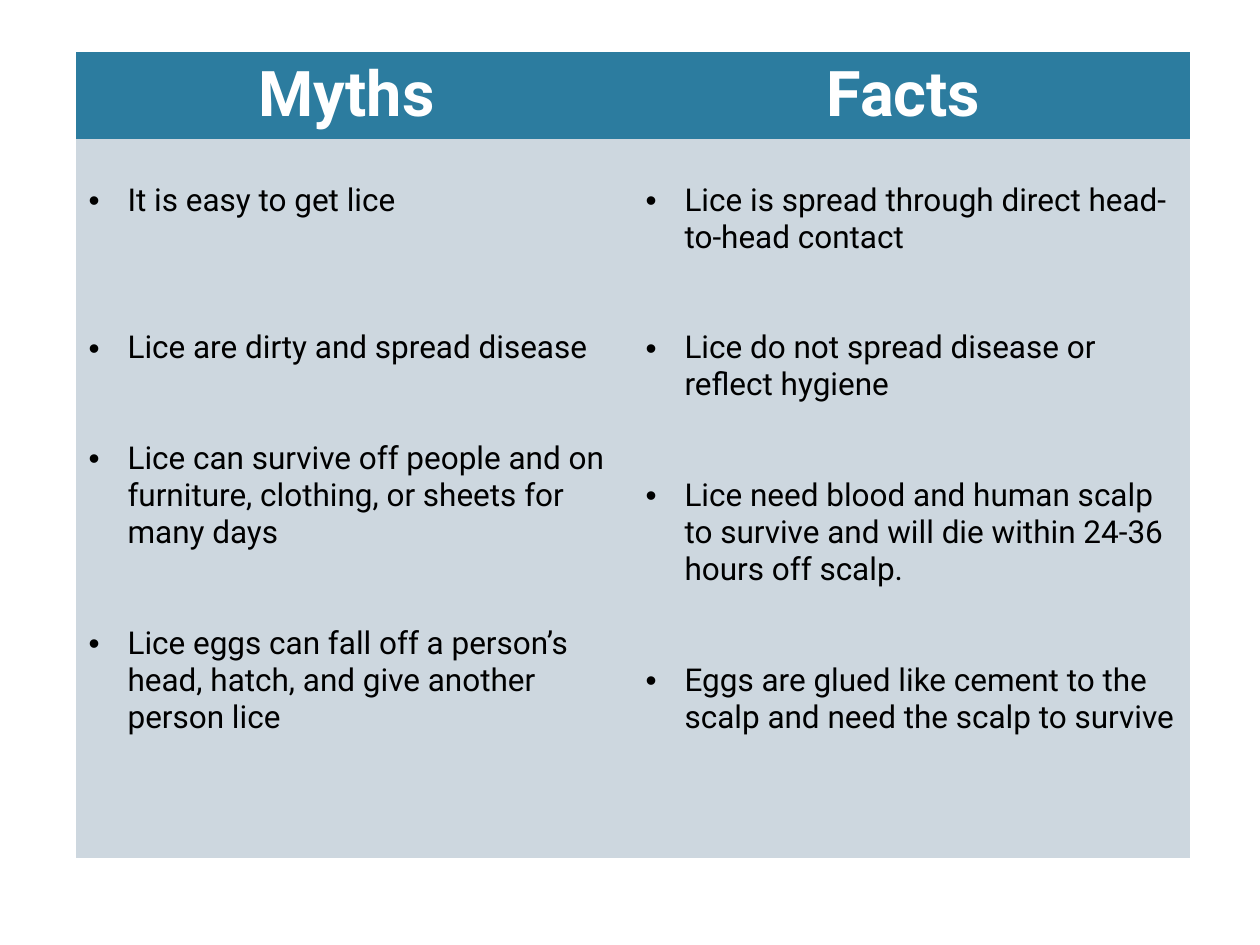
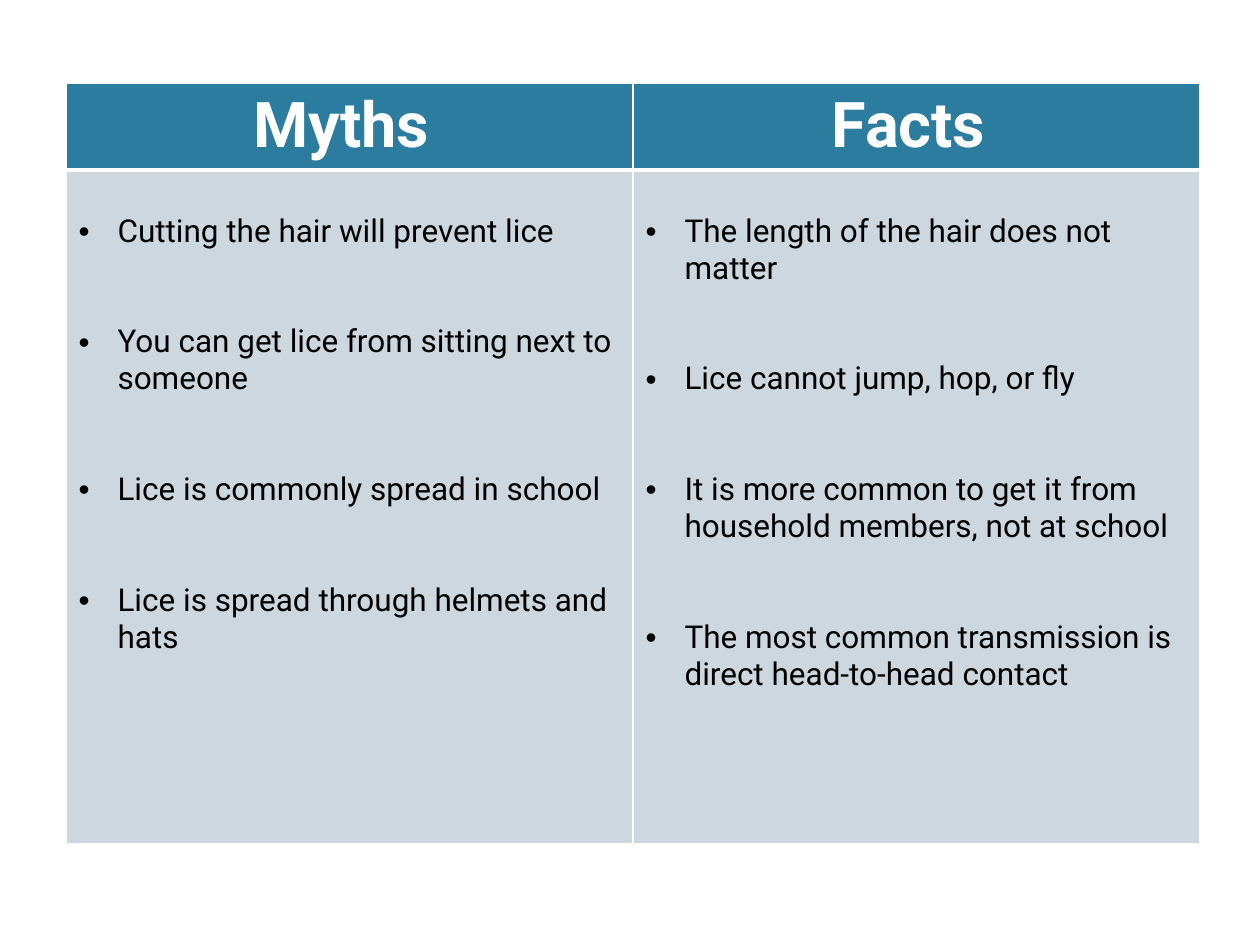
from dataclasses import dataclass

from lxml import etree
from pptx import Presentation, util as u
from pptx.dml.color import RGBColor
from pptx.enum import text
from pptx.oxml.ns import qn

HEADINGS = ("Myths ", "Facts ")

SLIDES = [
    {
        "left": 76, "top": 52, "column": 557, "body": 719, "ruled": False,
        "lists": [
            ["It is easy to get lice",
             "Lice are dirty and spread disease",
             "Lice can survive off people and on furniture, clothing, or sheets for many days",
             "Lice eggs can fall off a person’s head, hatch, and give another person lice"],
            ["Lice is spread through direct head-to-head contact",
             "Lice do not spread disease or reflect hygiene",
             "Lice need blood and human scalp to survive and will die within 24-36 hours off scalp.",
             "Eggs are glued like cement to the scalp and need the scalp to survive"],
        ],
        "blank_lines": [(0, 3, 2, 2), (0, 2, 2, 2)],
    },
    {
        "left": 66, "top": 83, "column": 567, "body": 674, "ruled": True,
        "lists": [
            ["Cutting the hair will prevent lice",
             "You can get lice from sitting next to someone",
             "Lice is commonly spread in school",
             "Lice is spread through helmets and hats"],
            ["The length of the hair does not matter",
             "Lice cannot jump, hop, or fly",
             "It is more common to get it from household members, not at school",
             "The most common transmission is direct head-to-head contact"],
        ],
        "blank_lines": [(0, 2, 2, 2), (0, 2, 2, 2)],
    },
]


@dataclass(frozen=True)
class Theme:
    font: str = "Roboto"
    header_fill: str = "2C7C9F"
    body_fill: str = "CDD7DF"
    rule: str = "FFFFFF"
    header_text: str = "FFFFFF"
    body_text: str = "000000"
    header_size: int = 36
    body_size: int = 18
    line_pitch: float = 21.1
    thin: int = 1
    thick: int = 3


THEME = Theme()
PX = 914400 / 126
HEADER_HEIGHT = 87
LIST_TOP = 43
LIST_INDENT = 39


def px(n):
    return u.Emu(round(n * PX))


def add_run(p, words, size, color, bold=False):
    r = p.add_run()
    r.text = words
    r.font.name = THEME.font
    r.font.size = u.Pt(size)
    r.font.bold = bold
    r.font.color.rgb = RGBColor.from_string(color)


def fill_cell(cell, color):
    cell.fill.solid()
    cell.fill.fore_color.rgb = RGBColor.from_string(color)


def set_borders(cell, widths):
    tc_pr = cell._tc.get_or_add_tcPr()
    for i, (side, width) in enumerate(zip("LRTB", widths)):
        ln = etree.Element(qn(f"a:ln{side}"), w=str(u.Pt(width)))
        if width:
            fill = etree.SubElement(ln, qn("a:solidFill"))
            etree.SubElement(fill, qn("a:srgbClr"), val=THEME.rule)
        else:
            etree.SubElement(ln, qn("a:noFill"))
        tc_pr.insert(i, ln)


def add_bullet(p):
    p_pr = p._p.get_or_add_pPr()
    p_pr.set("marL", str(px(LIST_INDENT)))
    p_pr.set("indent", str(-px(LIST_INDENT)))
    etree.SubElement(p_pr, qn("a:buFont"), typeface="Arial")
    etree.SubElement(p_pr, qn("a:buChar"), char="•")


def write_header(cell, heading):
    fill_cell(cell, THEME.header_fill)
    p = cell.text_frame.paragraphs[0]
    p.alignment = text.PP_ALIGN.CENTER
    add_run(p, heading, THEME.header_size, THEME.header_text, True)


def write_list(cell, items, blank_lines):
    fill_cell(cell, THEME.body_fill)
    cell.margin_top = px(LIST_TOP)
    tf = cell.text_frame
    for i, (item, blanks) in enumerate(zip(items, blank_lines)):
        p = tf.add_paragraph() if i else tf.paragraphs[0]
        p.space_before = u.Pt(blanks * THEME.line_pitch)
        add_bullet(p)
        add_run(p, item, THEME.body_size, THEME.body_text)


def add_comparison(s, c):
    heights = (HEADER_HEIGHT, c["body"])
    table = s.shapes.add_table(2, 2, px(c["left"]), px(c["top"]),
                               px(2 * c["column"]), px(sum(heights))).table
    table.horz_banding = False
    for row, height in zip(table.rows, heights):
        row.height = px(height)
    thin, thick = (THEME.thin, THEME.thick) if c["ruled"] else (0, 0)
    for i, heading in enumerate(HEADINGS):
        table.columns[i].width = px(c["column"])
        header, body = table.cell(0, i), table.cell(1, i)
        write_header(header, heading)
        write_list(body, c["lists"][i], c["blank_lines"][i])
        set_borders(header, (thin, thin, thin, thick))
        set_borders(body, (thin, thin, thick, thin))


def main():
    prs = Presentation()
    prs.slide_width, prs.slide_height = px(1260), px(945)
    for content in SLIDES:
        s = prs.slides.add_slide(prs.slide_layouts[6])
        add_comparison(s, content)
    prs.save("out.pptx")


if __name__ == "__main__":
    main()
